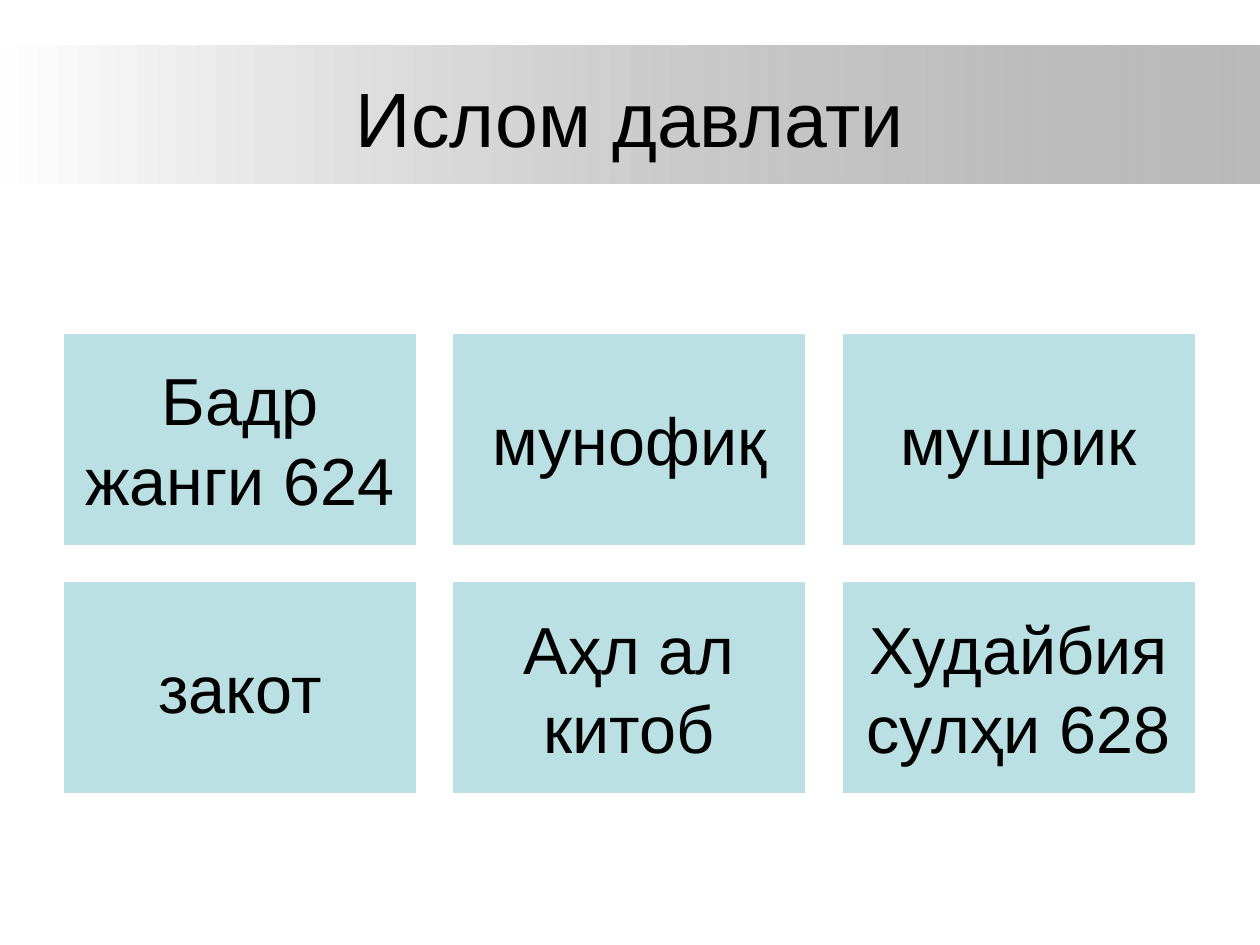
from lxml import etree
from pptx import Presentation
from pptx.dml.color import RGBColor
from pptx.enum.shapes import MSO_SHAPE as Shape
from pptx.enum.text import MSO_ANCHOR as Anchor, PP_ALIGN as Align
from pptx.oxml.ns import qn
from pptx.util import Inches, Pt

TERMS = [
    ["Бадр жанги 624", "мунофиқ", "мушрик"],
    ["закот", "Аҳл ал китоб", "Худайбия сулҳи 628"],
]
LEFT, TOP = 0.5, 2.64
TILE_WIDTH, TILE_HEIGHT = 2.81, 1.69
GAP = 0.28


def color(value):
    return RGBColor.from_string(value)


def write_text(shape, text, size, inset=None):
    frame = shape.text_frame
    frame.word_wrap = True
    frame.vertical_anchor = Anchor.MIDDLE
    if inset is not None:
        frame.margin_left = frame.margin_right = Inches(inset)
        frame.margin_top = frame.margin_bottom = Inches(inset)
    paragraph = frame.paragraphs[0]
    paragraph.alignment = Align.CENTER
    run = paragraph.add_run()
    run.text = text
    run.font.size = Pt(size)
    run.font.name = "Arial"
    run.font.color.rgb = color("000000")


def add_rectangle(slide, left, top, width, height):
    shape = slide.shapes.add_shape(
        Shape.RECTANGLE, Inches(left), Inches(top), Inches(width), Inches(height))
    shape.shadow.inherit = False
    return shape


def add_title_band(slide):
    band = add_rectangle(slide, 0, 0.36, 10, 1.1)
    band.line.fill.background()
    band.fill.gradient()
    band.fill.gradient_angle = 0
    start, end = band.fill.gradient_stops
    start.position, end.position = 0, 1
    start.color.rgb = color("FFFFFF")
    end.color.rgb = color("808080")
    # The grey end is partly transparent
    grey = band.element.spPr.findall(".//" + qn("a:srgbClr"))[-1]
    etree.SubElement(grey, qn("a:alpha"), val="54000")


def add_title(slide, text):
    box = slide.shapes.add_textbox(Inches(0.5), Inches(0.3), Inches(9), Inches(1.25))
    write_text(box, text, size=44)


def add_tile(slide, text, left, top):
    tile = add_rectangle(slide, left, top, TILE_WIDTH, TILE_HEIGHT)
    tile.fill.solid()
    tile.fill.fore_color.rgb = color("BBE0E3")
    tile.line.color.rgb = color("FFFFFF")
    tile.line.width = Pt(1)
    write_text(tile, text, size=38, inset=0.16)


def main():
    presentation = Presentation()
    presentation.slide_width = Inches(10)
    presentation.slide_height = Inches(7.5)
    slide = presentation.slides.add_slide(presentation.slide_layouts[6])

    # Heading
    add_title_band(slide)
    add_title(slide, "Ислом давлати")

    # Grid of terms
    for row, terms in enumerate(TERMS):
        for column, term in enumerate(terms):
            add_tile(slide, term,
                     LEFT + column * (TILE_WIDTH + GAP),
                     TOP + row * (TILE_HEIGHT + GAP))

    presentation.save("out.pptx")


if __name__ == "__main__":
    main()
